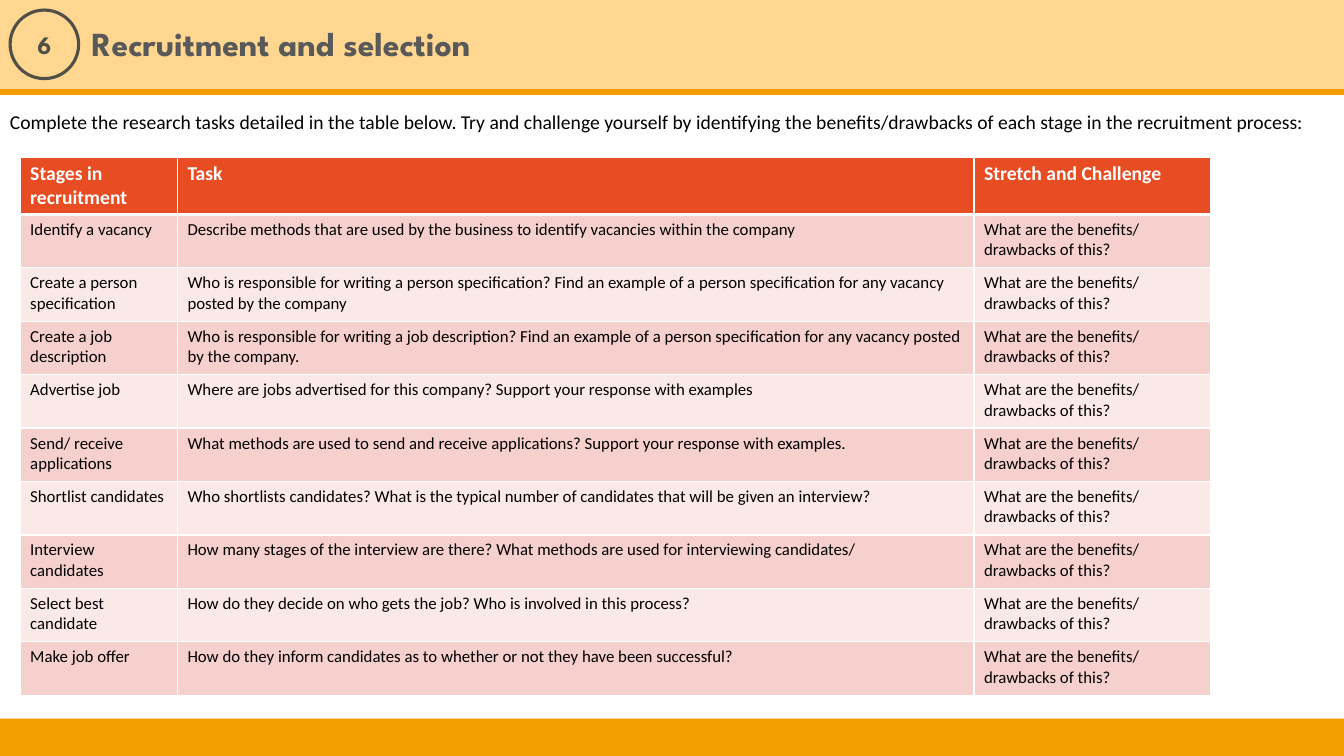
from lxml import etree
from pptx import Presentation
from pptx.dml.color import RGBColor
from pptx.enum import shapes, text
from pptx.oxml import ns
from pptx.util import Inches, Pt

PALE_ORANGE = RGBColor(0xFF, 0xD7, 0x91)
ORANGE = RGBColor(0xF4, 0x9D, 0x00)
OLIVE = RGBColor(0x50, 0x50, 0x46)
GREY = RGBColor(0x59, 0x59, 0x59)
RED = RGBColor(0xE8, 0x4C, 0x22)
PINK = RGBColor(0xF6, 0xD0, 0xCD)
PALE_PINK = RGBColor(0xFB, 0xE9, 0xE8)
WHITE = RGBColor(0xFF, 0xFF, 0xFF)
BLACK = RGBColor(0x00, 0x00, 0x00)

CHALLENGE = "What are the benefits/ drawbacks of this?"
HEADINGS = ("Stages in recruitment", "Task", "Stretch and Challenge")
STAGES = [
    ("Identify a vacancy",
     "Describe methods that are used by the business to identify vacancies within the company"),
    ("Create a person specification",
     "Who is responsible for writing a person specification? Find an example of a person "
     "specification for any vacancy posted by the company"),
    ("Create a job description",
     "Who is responsible for writing a job description? Find an example of a person "
     "specification for any vacancy posted by the company."),
    ("Advertise job",
     "Where are jobs advertised for this company? Support your response with examples"),
    ("Send/ receive applications",
     "What methods are used to send and receive applications? Support your response with examples."),
    ("Shortlist candidates",
     "Who shortlists candidates? What is the typical number of candidates that will be given an interview?"),
    ("Interview candidates",
     "How many stages of the interview are there? What methods are used for interviewing candidates/"),
    ("Select best candidate",
     "How do they decide on who gets the job? Who is involved in this process?"),
    ("Make job offer",
     "How do they inform candidates as to whether or not they have been successful?"),
]


def add_run(frame, words, size, color, font="Calibri", bold=False):
    run = frame.paragraphs[0].add_run()
    run.text = words
    run.font.size = Pt(size)
    run.font.name = font
    run.font.bold = bold
    run.font.color.rgb = color


def add_border(cell, side, width):
    line = etree.SubElement(cell._tc.get_or_add_tcPr(), ns.qn(f"a:{side}"), w=str(Pt(width)))
    fill = etree.SubElement(line, ns.qn("a:solidFill"))
    etree.SubElement(fill, ns.qn("a:srgbClr"), val=str(WHITE))


presentation = Presentation()
presentation.slide_width = Inches(13.33)
presentation.slide_height = Inches(7.5)
slide = presentation.slides.add_slide(presentation.slide_layouts[5])

# Header and footer bands
for top, height, color in ((0, 0.91, PALE_ORANGE), (7.13, 0.37, ORANGE)):
    band = slide.shapes.add_shape(shapes.MSO_SHAPE.RECTANGLE, 0, Inches(top),
                                  Inches(13.33), Inches(height))
    band.shadow.inherit = False
    band.fill.solid()
    band.fill.fore_color.rgb = color
    band.line.fill.background()

header_rule = slide.shapes.add_connector(shapes.MSO_CONNECTOR.STRAIGHT, 0, Inches(0.91),
                                         Inches(13.33), Inches(0.91))
header_rule.line.color.rgb = ORANGE
header_rule.line.width = Pt(4.5)
etree.SubElement(header_rule._element.spPr, ns.qn("a:effectLst"))

# Numbered circle
circle = slide.shapes.add_shape(shapes.MSO_SHAPE.OVAL, Inches(0.1), Inches(0.1),
                                Inches(0.68), Inches(0.68))
circle.shadow.inherit = False
circle.fill.background()
circle.line.color.rgb = OLIVE
circle.line.width = Pt(2.25)
circle.text_frame.vertical_anchor = text.MSO_ANCHOR.MIDDLE
circle.text_frame.paragraphs[0].alignment = text.PP_ALIGN.CENTER
add_run(circle.text_frame, "6", 18, OLIVE, "League Spartan", True)

# Title, brought in front of the header band
title = slide.shapes.title
title.left, title.top = Inches(0.81), Inches(0.09)
title.width, title.height = Inches(10.31), Inches(0.73)
title.text_frame.vertical_anchor = text.MSO_ANCHOR.MIDDLE
title.text_frame.paragraphs[0].alignment = text.PP_ALIGN.LEFT
title.text_frame.paragraphs[0].line_spacing = 0.9
add_run(title.text_frame, "Recruitment and selection", 24, GREY, "League Spartan", True)
slide.shapes._spTree.append(title._element)

# Instruction
instruction = slide.shapes.add_textbox(0, Inches(1.04), Inches(13.33), Inches(0.34))
instruction.text_frame.word_wrap = True
add_run(instruction.text_frame,
        "Complete the research tasks detailed in the table below. Try and challenge yourself by "
        "identifying the benefits/drawbacks of each stage in the recruitment process:", 14, BLACK)

# Table of recruitment stages
rows = [HEADINGS] + [(stage, task, CHALLENGE) for stage, task in STAGES]
table = slide.shapes.add_table(len(rows), len(HEADINGS), Inches(0.2), Inches(1.56),
                               Inches(11.81), Inches(5.33)).table
for column, width in zip(table.columns, (1.56, 7.9, 2.35)):
    column.width = Inches(width)

for row_index, row in enumerate(rows):
    is_header = row_index == 0
    table.rows[row_index].height = Inches(0.56 if is_header else 0.53)
    row_fill = RED if is_header else PINK if row_index % 2 else PALE_PINK
    for column_index, words in enumerate(row):
        cell = table.cell(row_index, column_index)
        for side in ("lnL", "lnR", "lnT", "lnB"):
            thick = (row_index, side) in ((0, "lnB"), (1, "lnT"))
            add_border(cell, side, 3 if thick else 1)
        cell.fill.solid()
        cell.fill.fore_color.rgb = row_fill
        add_run(cell.text_frame, words, 14 if is_header else 12,
                WHITE if is_header else BLACK, bold=is_header)

presentation.save("out.pptx")
